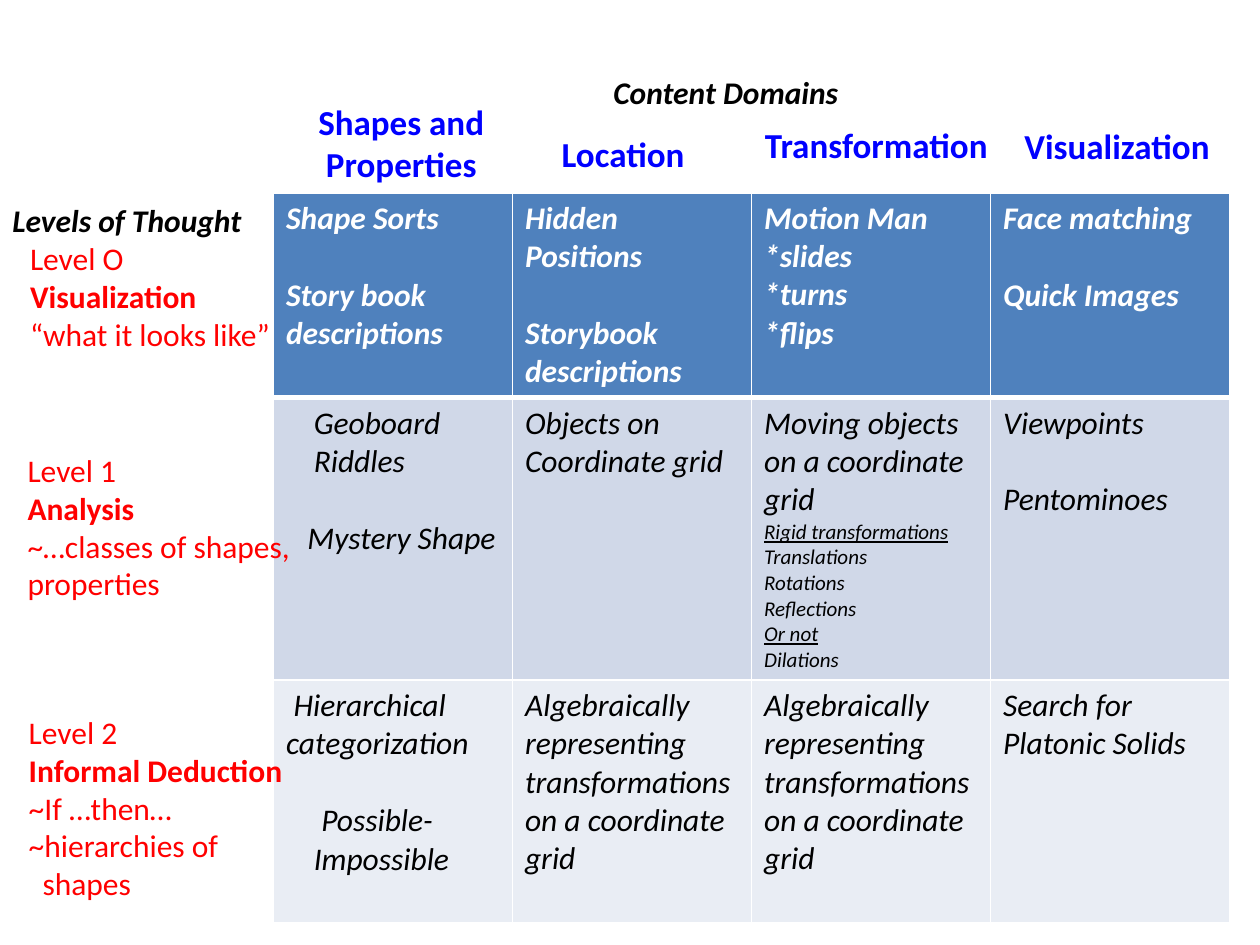
from dataclasses import dataclass

from lxml.etree import SubElement
from pptx import Presentation
from pptx.dml.color import RGBColor
from pptx.enum.text import MSO_AUTO_SIZE as AutoSize, PP_ALIGN as Align
from pptx.oxml.ns import qn
from pptx.util import Inches, Pt

FONT = "Calibri"
WHITE, BLACK, BLUE, RED = "FFFFFF", "000000", "0000FF", "FF0000"
LINE_GAP = 22  # points, one empty line of body text


@dataclass
class Line:
    text: str
    size: int = 18
    bold: bool = False
    italic: bool = False
    underline: bool = False
    indent: float = 0
    gap: float = 0


@dataclass
class Label:
    left: float
    top: float
    width: float
    height: float
    color: str
    lines: list[Line]
    align: Align = Align.LEFT


@dataclass
class Level:
    height: float
    fill: str
    color: str
    bold: bool
    cells: list[list[Line]]


def rgb(value: str) -> RGBColor:
    return RGBColor.from_string(value)


def write_lines(frame, lines: list[Line], color: str, align=Align.LEFT) -> None:
    for number, line in enumerate(lines):
        paragraph = frame.add_paragraph() if number else frame.paragraphs[0]
        paragraph.text = line.text
        paragraph.alignment = align
        if line.gap:
            paragraph.space_before = Pt(line.gap)
        if line.indent:
            properties = paragraph._p.get_or_add_pPr()
            properties.set("marL", str(Inches(line.indent)))
            properties.set("indent", "0")
        font = paragraph.font
        font.name, font.size = FONT, Pt(line.size)
        font.bold, font.italic = line.bold, line.italic
        font.underline = line.underline
        font.color.rgb = rgb(color)


def draw_label(slide, label: Label) -> None:
    box = slide.shapes.add_textbox(Inches(label.left), Inches(label.top),
                                   Inches(label.width), Inches(label.height))
    frame = box.text_frame
    frame.word_wrap = False
    frame.auto_size = AutoSize.SHAPE_TO_FIT_TEXT
    write_lines(frame, label.lines, label.color, label.align)


def set_borders(cell, top: float, bottom: float) -> None:
    """Draw white borders; must run before the cell gets its fill."""
    properties = cell._tc.get_or_add_tcPr()
    for side, width in (("L", 1), ("R", 1), ("T", top), ("B", bottom)):
        border = SubElement(properties, qn(f"a:ln{side}"), w=str(Pt(width)))
        SubElement(SubElement(border, qn("a:solidFill")), qn("a:srgbClr"), val=WHITE)


def draw_table(slide, levels: list[Level]) -> None:
    columns = len(levels[0].cells)
    height = sum(level.height for level in levels)
    table = slide.shapes.add_table(len(levels), columns, Inches(2.17), Inches(1.53),
                                   Inches(7.59), Inches(height)).table
    table.first_row = table.horz_banding = False
    for r, level in enumerate(levels):
        table.rows[r].height = Inches(level.height)
        for c, lines in enumerate(level.cells):
            cell = table.cell(r, c)
            set_borders(cell, top=3 if r == 1 else 1, bottom=3 if r == 0 else 1)
            cell.fill.solid()
            cell.fill.fore_color.rgb = rgb(level.fill)
            for line in lines:
                line.bold, line.italic = level.bold, True
            write_lines(cell.text_frame, lines, level.color)


def algebra() -> list[Line]:
    return [Line("Algebraically representing transformations on a coordinate grid")]


def domain(left: float, top: float, width: float, height: float, *texts: str) -> Label:
    lines = [Line(text, size=20, bold=True) for text in texts]
    return Label(left, top, width, height, BLUE, lines, Align.CENTER)


def axis_title(left: float, top: float, width: float, text: str) -> Label:
    return Label(left, top, width, 0.4, BLACK, [Line(text, bold=True, italic=True)])


def thought(left: float, top: float, width: float, height: float,
            level: str, name: str, *notes: Line) -> Label:
    return Label(left, top, width, height, RED, [Line(level), Line(name, bold=True), *notes])


LEVELS = [
    Level(1.62, "4F81BD", WHITE, True, [
        [Line("Shape Sorts"), Line("Story book descriptions", gap=LINE_GAP)],
        [Line("Hidden Positions"), Line("Storybook", gap=LINE_GAP), Line("descriptions")],
        [Line("Motion Man"), Line("*slides"), Line("*turns"), Line("*flips")],
        [Line("Face matching"), Line("Quick Images", gap=LINE_GAP)],
    ]),
    Level(2.24, "D0D8E8", BLACK, False, [
        [Line("Geoboard", indent=0.22), Line("Riddles", indent=0.22),
         Line("Mystery Shape", indent=0.17, gap=LINE_GAP)],
        [Line("Objects on Coordinate grid")],
        [Line("Moving objects on a coordinate grid"),
         Line("Rigid transformations", size=12, underline=True),
         Line("Translations", size=12), Line("Rotations", size=12),
         Line("Reflections", size=12), Line("Or not", size=12, underline=True),
         Line("Dilations", size=12)],
        [Line("Viewpoints"), Line("Pentominoes", gap=LINE_GAP)],
    ]),
    Level(1.93, "E9EDF4", BLACK, False, [
        [Line("Hierarchical", indent=0.06), Line("categorization"),
         Line("Possible-", indent=0.28, gap=LINE_GAP), Line("Impossible", indent=0.22)],
        algebra(),
        algebra(),
        [Line("Search for Platonic Solids")],
    ]),
]

LABELS = [
    domain(2.42, 0.75, 1.53, 0.77, "Shapes and", "Properties"),
    domain(4.35, 1, 1.19, 0.44, "Location"),
    domain(5.95, 0.93, 2.01, 0.44, "Transformation"),
    domain(8.02, 0.94, 1.69, 0.44, "Visualization"),
    thought(0.14, 1.85, 2.13, 1.01, "Level O", "Visualization",
            Line("“what it looks like”")),
    thought(0.12, 3.53, 2.31, 1.31, "Level 1", "Analysis",
            Line("~…classes of shapes,"), Line("properties")),
    thought(0.13, 5.61, 2.24, 1.62, "Level 2", "Informal Deduction",
            Line("~If …then…"), Line("~hierarchies of"), Line("shapes", indent=0.11)),
    axis_title(4.77, 0.53, 2.07, "Content Domains"),
    axis_title(0, 1.55, 2.1, "Levels of Thought"),
]


def main() -> None:
    presentation = Presentation()
    presentation.slide_width, presentation.slide_height = Inches(10), Inches(7.5)
    slide = presentation.slides.add_slide(presentation.slide_layouts[6])
    draw_table(slide, LEVELS)
    for label in LABELS:
        draw_label(slide, label)
    presentation.save("out.pptx")


if __name__ == "__main__":
    main()
